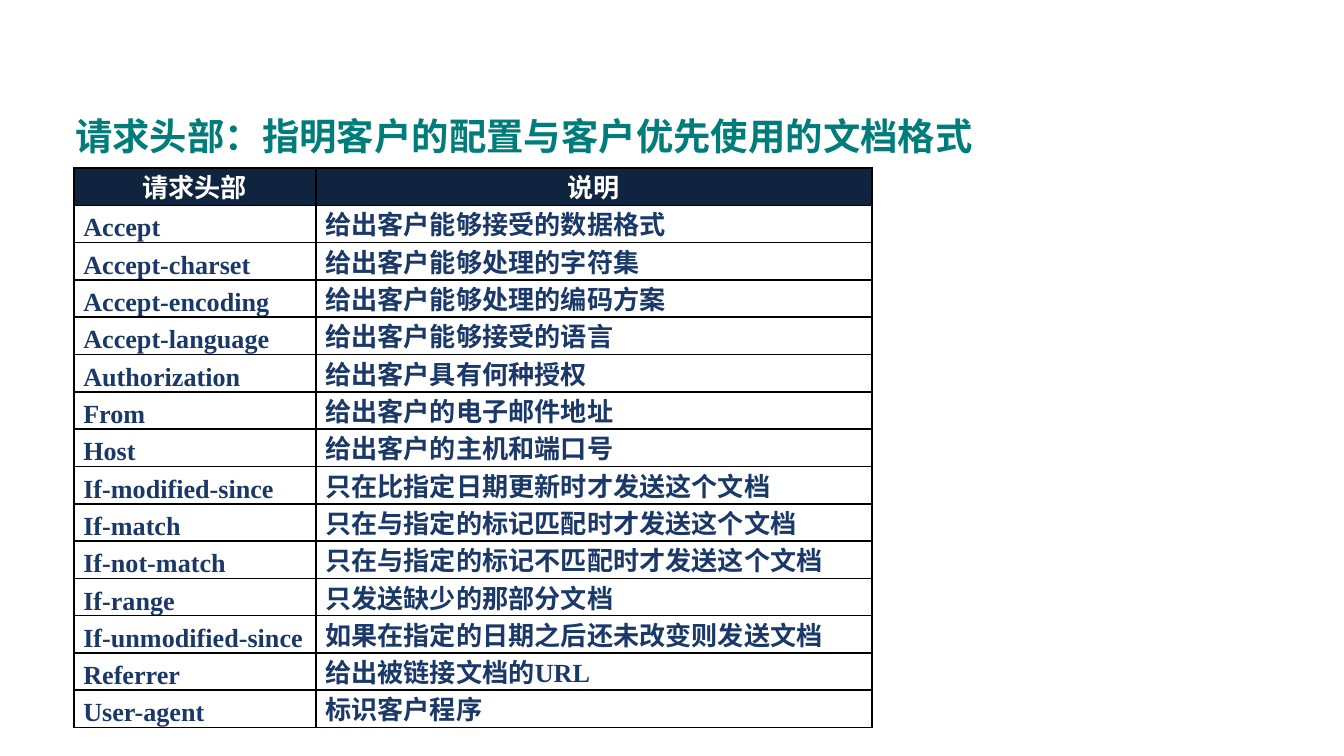
"""Build a slide with a table of HTTP request headers."""
from lxml import etree
from pptx import Presentation, util as u
from pptx.dml.color import RGBColor
from pptx.enum import text
from pptx.oxml import ns

TITLE = "请求头部：指明客户的配置与客户优先使用的文档格式"
HEADERS = [
    ("请求头部", "说明"),
    ("Accept", "给出客户能够接受的数据格式"),
    ("Accept-charset", "给出客户能够处理的字符集"),
    ("Accept-encoding", "给出客户能够处理的编码方案"),
    ("Accept-language", "给出客户能够接受的语言"),
    ("Authorization", "给出客户具有何种授权"),
    ("From", "给出客户的电子邮件地址"),
    ("Host", "给出客户的主机和端口号"),
    ("If-modified-since", "只在比指定日期更新时才发送这个文档"),
    ("If-match", "只在与指定的标记匹配时才发送这个文档"),
    ("If-not-match", "只在与指定的标记不匹配时才发送这个文档"),
    ("If-range", "只发送缺少的那部分文档"),
    ("If-unmodified-since", "如果在指定的日期之后还未改变则发送文档"),
    ("Referrer", "给出被链接文档的URL"),
    ("User-agent", "标识客户程序"),
]
TEAL = RGBColor(0x00, 0x7D, 0x7A)
NAVY = RGBColor(0x0F, 0x24, 0x3E)
BLUE = RGBColor(0x1A, 0x38, 0x68)
WHITE = RGBColor(0xFF, 0xFF, 0xFF)
BLACK = RGBColor(0x00, 0x00, 0x00)
FONT = "Times New Roman"
WIDTH = u.Inches(10)
HEIGHT = WIDTH * 9 // 16
COLS = [u.Inches(1.8), u.Inches(4.14)]
ROW = u.Pt(20)


def add_run(p, words, size, color):
    r = p.add_run()
    r.text = words
    r.font.name, r.font.size, r.font.bold = FONT, u.Pt(size), True
    r.font.color.rgb = color


def add_borders(cell, color, width):
    tc_pr = cell._tc.get_or_add_tcPr()
    for side in ("lnL", "lnR", "lnT", "lnB"):
        ln = etree.SubElement(tc_pr, ns.qn(f"a:{side}"), w=str(u.Pt(width)))
        fill = etree.SubElement(ln, ns.qn("a:solidFill"))
        etree.SubElement(fill, ns.qn("a:srgbClr"), val=str(color))


def fill_cell(cell, words, is_head):
    add_borders(cell, BLACK, 1)
    cell.fill.solid()
    cell.fill.fore_color.rgb = NAVY if is_head else WHITE
    cell.margin_left = cell.margin_right = u.Inches(0.07)
    cell.margin_top = cell.margin_bottom = 0
    cell.vertical_anchor = text.MSO_ANCHOR.BOTTOM
    p = cell.text_frame.paragraphs[0]
    p.alignment = text.PP_ALIGN.CENTER if is_head else text.PP_ALIGN.JUSTIFY
    p.line_spacing = u.Pt(10)
    add_run(p, words, 14, WHITE if is_head else BLUE)


def main():
    prs = Presentation()
    prs.slide_width, prs.slide_height = WIDTH, HEIGHT
    s = prs.slides.add_slide(prs.slide_layouts[6])

    tf = s.shapes.add_textbox(u.Inches(0.12), u.Inches(0.77), u.Inches(7.56), u.Inches(0.47)).text_frame
    tf.word_wrap = True
    tf.vertical_anchor = text.MSO_ANCHOR.MIDDLE
    tf.paragraphs[0].alignment = text.PP_ALIGN.CENTER
    add_run(tf.paragraphs[0], TITLE, 20, TEAL)

    table = s.shapes.add_table(len(HEADERS), len(COLS), u.Inches(0.55), u.Inches(1.25),
                               sum(COLS), ROW * len(HEADERS)).table
    for column, width in zip(table.columns, COLS):
        column.width = width
    for i, row in enumerate(HEADERS):
        table.rows[i].height = ROW
        for j, words in enumerate(row):
            fill_cell(table.cell(i, j), words, i == 0)

    prs.save("out.pptx")


if __name__ == "__main__":
    main()
